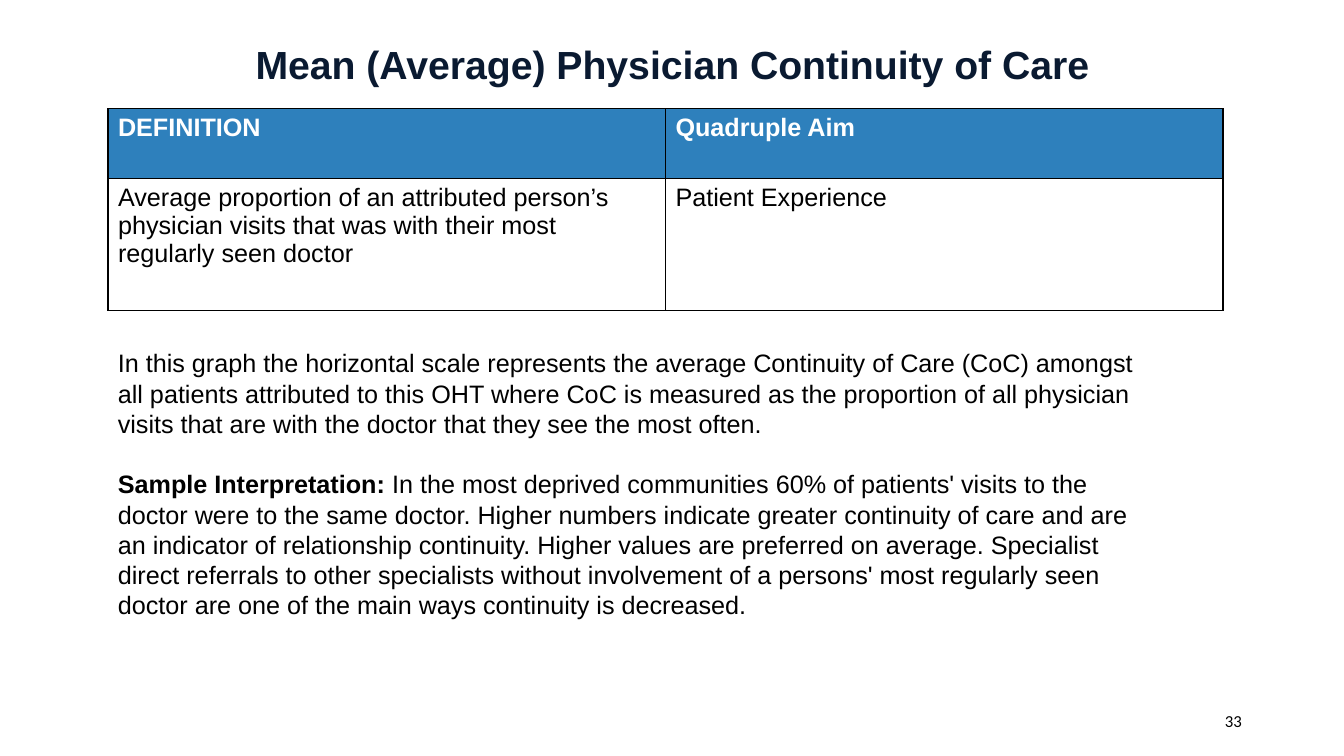
import dataclasses

import pptx
import pptx.dml.color
import pptx.enum.text
import pptx.oxml
import pptx.oxml.ns
import pptx.util

Cm = pptx.util.Cm
Pt = pptx.util.Pt
Align = pptx.enum.text.PP_ALIGN
Anchor = pptx.enum.text.MSO_ANCHOR

BLACK = "000000"
WHITE = "FFFFFF"
NAVY = "0A1A31"
BLUE = "2E80BC"


@dataclasses.dataclass(frozen=True)
class Style:
    size: float = 18
    color: str = BLACK
    bold: bool = False
    font: str = "Arial"


@dataclasses.dataclass(frozen=True)
class Box:
    left: float
    top: float
    width: float
    height: float


@dataclasses.dataclass(frozen=True)
class TableRow:
    height: float
    texts: tuple[str, ...]
    style: Style
    fill: str


BODY = Style()
STRONG = Style(bold=True)
HEADER = Style(color=WHITE, bold=True)
TITLE = Style(size=28, color=NAVY, bold=True)
NUMBER = Style(size=12, font="Calibri")

TABLE_BOX = Box(2.72, 2.74, 28.1, 5.08)
TABLE_ROWS = (
    TableRow(1.76, ("DEFINITION", "Quadruple Aim"), HEADER, BLUE),
    TableRow(
        3.32,
        (
            "Average proportion of an attributed person’s physician visits "
            "that was with their most regularly seen doctor",
            "Patient Experience",
        ),
        BODY,
        WHITE,
    ),
)

EXPLANATION = (
    (
        (
            "In this graph the horizontal scale represents the average Continuity of Care (CoC) "
            "amongst all patients attributed to this OHT where CoC is measured as the proportion "
            "of all physician visits that are with the doctor that they see the most often.",
            BODY,
        ),
    ),
    (
        ("Sample Interpretation: ", STRONG),
        (
            "In the most deprived communities 60% of patients' visits to the doctor were to the "
            "same doctor. Higher numbers indicate greater continuity of care and are an indicator "
            "of relationship continuity. Higher values are preferred on average. Specialist direct "
            "referrals to other specialists without involvement of a persons' most regularly seen "
            "doctor are one of the main ways continuity is decreased.",
            BODY,
        ),
    ),
)


def color(value: str) -> pptx.dml.color.RGBColor:
    return pptx.dml.color.RGBColor.from_string(value)


def add_run(paragraph, text: str, style: Style) -> None:
    run = paragraph.add_run()
    run.text = text
    run.font.name = style.font
    run.font.size = Pt(style.size)
    run.font.bold = style.bold
    run.font.color.rgb = color(style.color)


def place(shape, box: Box) -> None:
    shape.left, shape.top = Cm(box.left), Cm(box.top)
    shape.width, shape.height = Cm(box.width), Cm(box.height)


def add_text_box(slide, box: Box):
    shape = slide.shapes.add_textbox(
        Cm(box.left), Cm(box.top), Cm(box.width), Cm(box.height)
    )
    shape.text_frame.word_wrap = True
    return shape.text_frame


def add_borders(cell) -> None:
    properties = cell._tc.get_or_add_tcPr()
    for index, side in enumerate(("lnL", "lnR", "lnT", "lnB")):
        border = pptx.oxml.parse_xml(
            f'<a:{side} {pptx.oxml.ns.nsdecls("a")} w="12700"><a:solidFill>'
            f'<a:srgbClr val="{BLACK}"/></a:solidFill></a:{side}>'
        )
        properties.insert(index, border)


def add_title(slide) -> None:
    title = slide.shapes.title
    place(title, Box(1.96, 0.61, 29.97, 2.13))
    title.text_frame.vertical_anchor = Anchor.MIDDLE
    paragraph = title.text_frame.paragraphs[0]
    paragraph.alignment = Align.CENTER
    paragraph.line_spacing = 0.9
    add_run(paragraph, "Mean (Average) Physician Continuity of Care", TITLE)


def add_definition_table(slide) -> None:
    columns = len(TABLE_ROWS[0].texts)
    table = slide.shapes.add_table(
        len(TABLE_ROWS),
        columns,
        Cm(TABLE_BOX.left),
        Cm(TABLE_BOX.top),
        Cm(TABLE_BOX.width),
        Cm(TABLE_BOX.height),
    ).table
    for column in table.columns:
        column.width = Cm(TABLE_BOX.width / columns)
    for row_index, row in enumerate(TABLE_ROWS):
        table.rows[row_index].height = Cm(row.height)
        for column_index, text in enumerate(row.texts):
            cell = table.cell(row_index, column_index)
            cell.fill.solid()
            cell.fill.fore_color.rgb = color(row.fill)
            add_borders(cell)
            add_run(cell.text_frame.paragraphs[0], text, row.style)


def add_explanation(slide) -> None:
    frame = add_text_box(slide, Box(2.72, 8.64, 26.21, 7.19))
    for index, runs in enumerate(EXPLANATION):
        paragraph = frame.add_paragraph() if index else frame.paragraphs[0]
        paragraph.line_spacing = Pt(21.6)
        if index:
            paragraph.space_before = Pt(21.6)
        for text, style in runs:
            add_run(paragraph, text, style)


def add_slide_number(slide) -> None:
    frame = add_text_box(slide, Box(23.93, 17.65, 7.62, 1.02))
    frame.vertical_anchor = Anchor.MIDDLE
    paragraph = frame.paragraphs[0]
    paragraph.alignment = Align.RIGHT
    add_run(paragraph, "33", NUMBER)


def main() -> None:
    presentation = pptx.Presentation()
    presentation.slide_width = Cm(33.87)
    presentation.slide_height = Cm(19.05)
    slide = presentation.slides.add_slide(presentation.slide_layouts[5])
    add_title(slide)
    add_definition_table(slide)
    add_explanation(slide)
    add_slide_number(slide)
    presentation.save("out.pptx")


if __name__ == "__main__":
    main()
